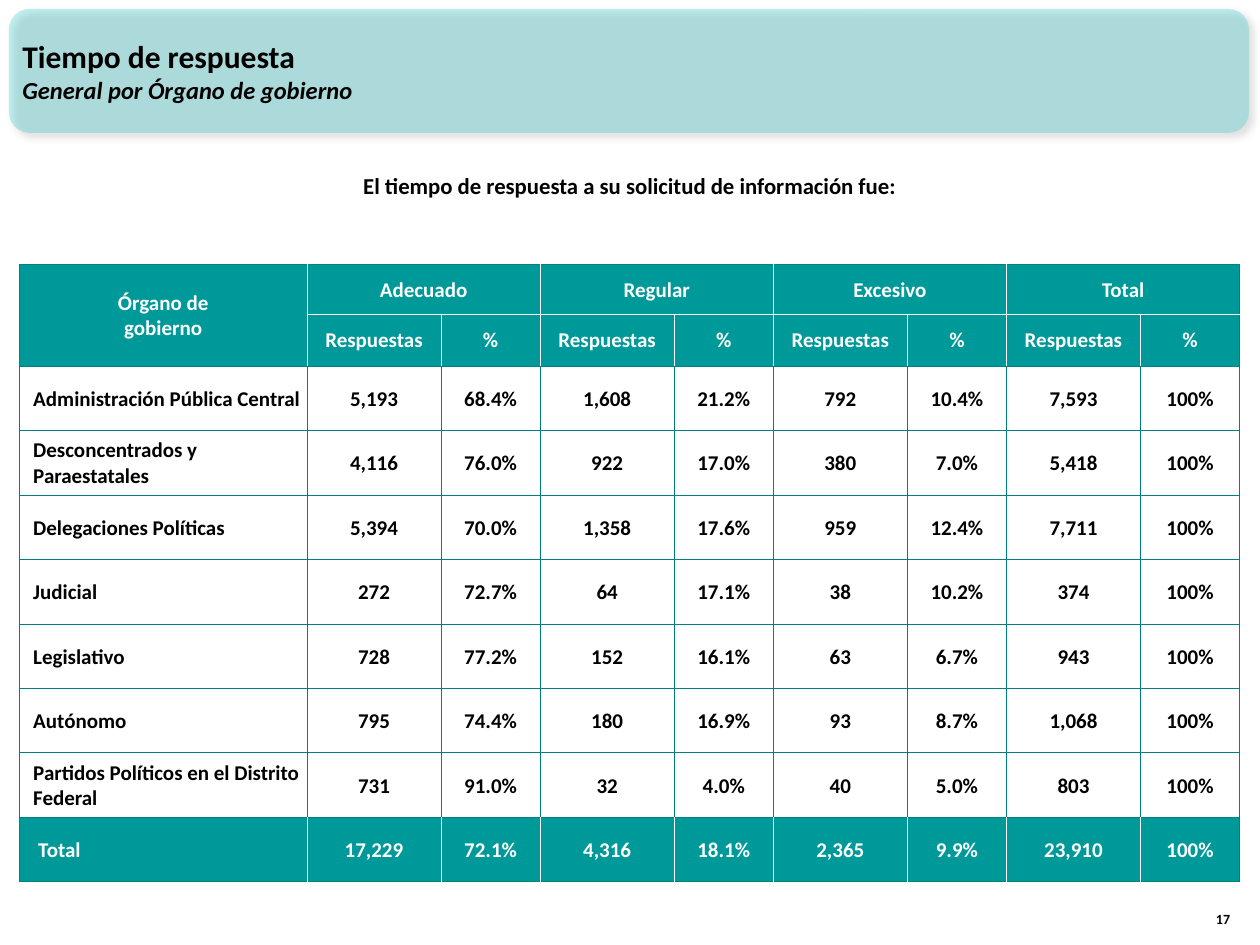
from lxml import etree
from pptx import Presentation
from pptx.dml.color import RGBColor
from pptx.enum.shapes import MSO_SHAPE
from pptx.enum.text import MSO_ANCHOR, PP_ALIGN
from pptx.oxml import parse_xml
from pptx.oxml.ns import nsdecls, qn
from pptx.util import Cm, Pt

LEFT, MID, RIGHT = PP_ALIGN.LEFT, PP_ALIGN.CENTER, PP_ALIGN.RIGHT
TOP, CENTER, BOTTOM = MSO_ANCHOR.TOP, MSO_ANCHOR.MIDDLE, MSO_ANCHOR.BOTTOM
ROUND = MSO_SHAPE.ROUNDED_RECTANGLE

FONT = "Calibri"
BLACK, WHITE, TEAL, EDGE, AQUA = "000000", "FFFFFF", "009999", "008080", "33CCCC"

TITLE = "Tiempo de respuesta"
SUB = "General por Órgano de gobierno"
ASK = "El tiempo de respuesta a su solicitud de información fue:"
PAGE = "17"

CORNER = ["Órgano de", "gobierno"]
GROUPS = ["Adecuado", "Regular", "Excesivo", "Total"]
PAIR = ["Respuestas", "%"]
ROWS = [
    ("Administración Pública Central",
     "5,193", "68.4%", "1,608", "21.2%", "792", "10.4%", "7,593", "100%"),
    ("Desconcentrados y Paraestatales",
     "4,116", "76.0%", "922", "17.0%", "380", "7.0%", "5,418", "100%"),
    ("Delegaciones Políticas",
     "5,394", "70.0%", "1,358", "17.6%", "959", "12.4%", "7,711", "100%"),
    ("Judicial",
     "272", "72.7%", "64", "17.1%", "38", "10.2%", "374", "100%"),
    ("Legislativo",
     "728", "77.2%", "152", "16.1%", "63", "6.7%", "943", "100%"),
    ("Autónomo",
     "795", "74.4%", "180", "16.9%", "93", "8.7%", "1,068", "100%"),
    ("Partidos Políticos en el Distrito Federal",
     "731", "91.0%", "32", "4.0%", "40", "5.0%", "803", "100%"),
    ("Total",
     "17,229", "72.1%", "4,316", "18.1%", "2,365", "9.9%", "23,910", "100%"),
]

WIDTHS = [5.8] + [2.7, 2.0] * len(GROUPS)
HEIGHTS = [1.0, 1.04] + [1.3] * len(ROWS)
LAST_ROW, LAST_COL = len(HEIGHTS) - 1, len(WIDTHS) - 1


def rgb(code):
    return RGBColor.from_string(code)


def write(frame, lines, align=LEFT, color=BLACK):
    """Fill a text frame with bold lines given as (text, size, italic)."""
    for i, (text, size, slant) in enumerate(lines):
        para = frame.paragraphs[0] if i == 0 else frame.add_paragraph()
        para.alignment = align
        run = para.add_run()
        run.text = text
        font = run.font
        font.name, font.size, font.bold = FONT, Pt(size), True
        font.italic = slant
        font.color.rgb = rgb(color)


def label(slide, box, lines, align=LEFT, anchor=TOP):
    frame = slide.shapes.add_textbox(*map(Cm, box)).text_frame
    frame.word_wrap = True
    frame.vertical_anchor = anchor
    write(frame, lines, align)


def banner(slide):
    shape = slide.shapes.add_shape(ROUND, Cm(0.18), Cm(0.18), Cm(25), Cm(2.5))
    shape.fill.solid()
    shape.fill.fore_color.rgb = rgb(AQUA)
    shape.line.fill.background()
    props = shape._element.spPr
    tint = props.find(qn("a:solidFill"))[0]
    etree.SubElement(tint, qn("a:alpha"), val="30000")
    props.append(parse_xml(
        f'<a:effectLst {nsdecls("a")}>'
        f'<a:outerShdw blurRad="{Pt(4)}" dist="{Pt(3)}" dir="2700000" '
        'algn="tl" rotWithShape="0">'
        f'<a:srgbClr val="{BLACK}"><a:alpha val="40000"/></a:srgbClr>'
        '</a:outerShdw></a:effectLst>'))


def border(cell, row, col):
    """Draw white lines between teal cells and dark teal lines elsewhere."""
    dark = row < 2 or row == LAST_ROW
    end = col + 1 if row == 0 and col > 0 else col
    white = {
        "L": dark and col > 0,
        "R": dark and end < LAST_COL,
        "T": row == 1 and col > 0,
        "B": row == 0 and col > 0,
    }
    props = cell._tc.get_or_add_tcPr()
    for side, pale in white.items():
        props.append(parse_xml(
            f'<a:ln{side} {nsdecls("a")} w="{Pt(0.5)}"><a:solidFill>'
            f'<a:srgbClr val="{WHITE if pale else EDGE}"/>'
            f'</a:solidFill></a:ln{side}>'))


def grid(slide):
    frame = slide.shapes.add_table(
        len(HEIGHTS), len(WIDTHS), Cm(0.39), Cm(5.33),
        Cm(sum(WIDTHS)), Cm(sum(HEIGHTS)))
    table = frame.table
    table.first_row = table.horz_banding = False
    for part, size in zip(table.columns, WIDTHS):
        part.width = Cm(size)
    for part, size in zip(table.rows, HEIGHTS):
        part.height = Cm(size)

    texts = {(0, 0): CORNER}
    for i, name in enumerate(GROUPS):
        first = 1 + 2 * i
        texts[0, first] = [name]
        for j, head in enumerate(PAIR):
            texts[1, first + j] = [head]
        table.cell(0, first).merge(table.cell(0, first + 1))
    table.cell(0, 0).merge(table.cell(1, 0))
    for row, values in enumerate(ROWS, 2):
        for col, value in enumerate(values):
            texts[row, col] = [value]

    for row in range(LAST_ROW + 1):
        for col in range(LAST_COL + 1):
            cell = table.cell(row, col)
            dark = row < 2 or row == LAST_ROW
            border(cell, row, col)
            if dark:
                cell.fill.solid()
                cell.fill.fore_color.rgb = rgb(TEAL)
            else:
                cell.fill.background()
            cell.vertical_anchor = CENTER
            cell.margin_left = cell.margin_right = cell.margin_top = Cm(0.03)
            cell.margin_bottom = 0
            side = col == 0 and row > 1
            if side:
                indent = Cm(0.35 if row == LAST_ROW else 0.25)
                props = cell.text_frame.paragraphs[0]._p.get_or_add_pPr()
                props.set("marL", str(indent))
                props.set("indent", "0")
            lines = [(text, 12, False) for text in texts.get((row, col), [])]
            write(cell.text_frame, lines, LEFT if side else MID,
                  WHITE if dark else BLACK)


def main():
    deck = Presentation()
    deck.slide_width, deck.slide_height = Cm(25.4), Cm(19.05)
    slide = deck.slides.add_slide(deck.slide_layouts[6])
    banner(slide)
    label(slide, (24.03, 17.8, 1.02, 1.02), [(PAGE, 8, False)], RIGHT, BOTTOM)
    label(slide, (0.2, 0.23, 23.3, 2.39),
          [(TITLE, 18, False), (SUB, 14, True)], anchor=CENTER)
    grid(slide)
    label(slide, (2.26, 3.33, 20.85, 0.81), [(ASK, 13, False)], MID)
    deck.save("out.pptx")


if __name__ == "__main__":
    main()
